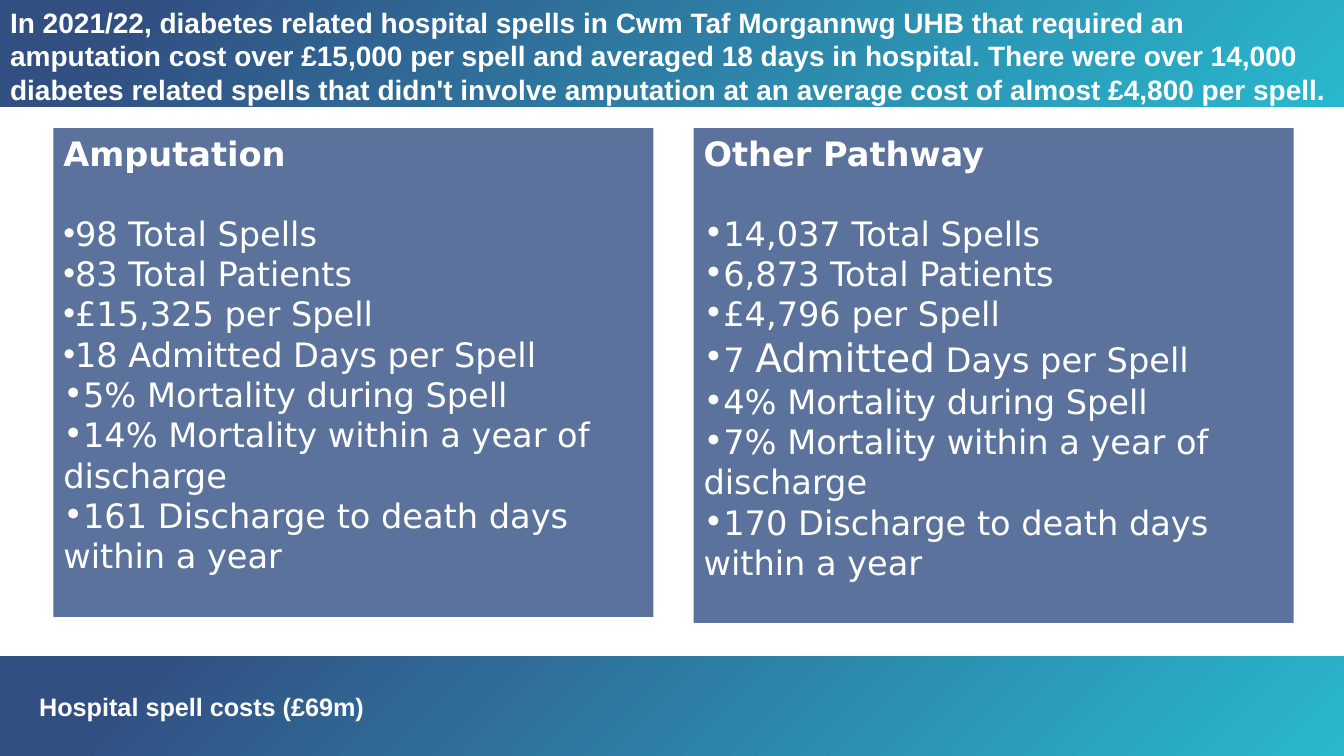
from dataclasses import dataclass

from lxml.etree import SubElement
from pptx import Presentation
from pptx.dml.color import RGBColor
from pptx.enum.shapes import MSO_SHAPE as Preset
from pptx.enum.text import MSO_ANCHOR as Anchor, MSO_AUTO_SIZE as AutoSize, PP_ALIGN as Align
from pptx.oxml.ns import qn
from pptx.shapes.autoshape import Shape
from pptx.slide import Slide
from pptx.text.text import Font, TextFrame
from pptx.util import Inches, Pt

WHITE = RGBColor(0xFF, 0xFF, 0xFF)
NAVY = RGBColor(0x32, 0x4F, 0x82)
CYAN = RGBColor(0x28, 0xB8, 0xCE)
SLATE = RGBColor(0x5B, 0x73, 0x9C)

BAND_FONT = "Arial"
PANEL_FONT = "DejaVu Sans"
SLIDE_WIDTH = 13.33
PANEL_TOP = 1.27
PANEL_WIDTH = 5.95

HEADLINE = (
    "In 2021/22, diabetes related hospital spells in Cwm Taf Morgannwg UHB that required an "
    "amputation cost over £15,000 per spell and averaged 18 days in hospital. There were over "
    "14,000 diabetes related spells that didn't involve amputation at an average cost of almost "
    "£4,800 per spell."
)


@dataclass(frozen=True)
class Band:
    top: float
    height: float


@dataclass(frozen=True)
class Panel:
    left: float
    height: float
    heading: str
    facts: tuple[str, ...]
    bullet_fonts: tuple[str, ...]
    enlarged: str = ""


BANDS = (Band(6.51, 0.99), Band(0, 1.06))

PANELS = (
    Panel(
        0.53,
        4.85,
        "Amputation",
        (
            "98 Total Spells",
            "83 Total Patients",
            "£15,325 per Spell",
            "18 Admitted Days per Spell",
            "5% Mortality during Spell",
            "14% Mortality within a year of discharge",
            "161 Discharge to death days within a year",
        ),
        (BAND_FONT,) * 4 + (PANEL_FONT,) * 3,
    ),
    Panel(
        6.88,
        4.91,
        "Other Pathway",
        (
            "14,037 Total Spells",
            "6,873 Total Patients",
            "£4,796 per Spell",
            "7 Admitted Days per Spell",
            "4% Mortality during Spell",
            "7% Mortality within a year of discharge",
            "170 Discharge to death days within a year",
        ),
        (PANEL_FONT,) * 7,
        enlarged="Admitted",
    ),
)


def style_font(font: Font, name: str, size: int, bold: bool) -> None:
    font.name = name
    font.size = Pt(size)
    font.bold = bold
    font.color.rgb = WHITE


def add_rectangle(page: Slide, left: float, top: float, width: float, height: float) -> Shape:
    box = page.shapes.add_shape(
        Preset.RECTANGLE, Inches(left), Inches(top), Inches(width), Inches(height)
    )
    box.shadow.inherit = False
    box.line.fill.background()
    return box


def add_band(page: Slide, band: Band) -> None:
    box = add_rectangle(page, 0, band.top, SLIDE_WIDTH, band.height)
    box.fill.gradient()
    box.fill.gradient_angle = 315
    for stop, position, color in zip(box.fill.gradient_stops, (0.1, 1), (NAVY, CYAN)):
        stop.position = position
        stop.color.rgb = color


def add_fact(frame: TextFrame, fact: str, bullet_font: str, enlarged: str) -> None:
    para = frame.add_paragraph()
    para.alignment = Align.LEFT
    properties = para._p.get_or_add_pPr()
    properties.set("marL", "0")
    properties.set("indent", "0")
    SubElement(properties, qn("a:buFont"), typeface=bullet_font)
    SubElement(properties, qn("a:buChar"), char="•")
    parts = fact.partition(enlarged) if enlarged else (fact,)
    for part in filter(None, parts):
        span = para.add_run()
        span.text = part
        style_font(span.font, PANEL_FONT, 28 if part == enlarged else 24, False)


def add_panel(page: Slide, panel: Panel) -> None:
    box = add_rectangle(page, panel.left, PANEL_TOP, PANEL_WIDTH, panel.height)
    box.fill.solid()
    box.fill.fore_color.rgb = SLATE
    frame = box.text_frame
    frame.word_wrap = True
    frame.vertical_anchor = Anchor.TOP
    frame.text = panel.heading
    heading = frame.paragraphs[0]
    heading.alignment = Align.LEFT
    heading.space_after = Pt(28)
    style_font(heading.runs[0].font, PANEL_FONT, 24, True)
    for fact, bullet_font in zip(panel.facts, panel.bullet_fonts):
        add_fact(frame, fact, bullet_font, panel.enlarged)


def fill_band_text(box: Shape, text: str, size: int) -> None:
    frame = box.text_frame
    frame.word_wrap = True
    frame.auto_size = AutoSize.SHAPE_TO_FIT_TEXT
    frame.vertical_anchor = Anchor.TOP
    frame.text = text
    para = frame.paragraphs[0]
    para.alignment = Align.LEFT
    style_font(para.runs[0].font, BAND_FONT, size, True)


def place_title(page: Slide) -> None:
    title = page.shapes.title
    title.left, title.top = Inches(0), Inches(0)
    title.width, title.height = Inches(SLIDE_WIDTH), Inches(1.11)
    fill_band_text(title, HEADLINE, 20)
    title.element.getparent().append(title.element)


def main() -> None:
    deck = Presentation()
    deck.slide_width = Inches(SLIDE_WIDTH)
    deck.slide_height = Inches(7.5)
    page = deck.slides.add_slide(deck.slide_layouts.get_by_name("Title Only"))
    for band in BANDS:
        add_band(page, band)
    place_title(page)
    for panel in PANELS:
        add_panel(page, panel)
    footer = page.shapes.add_textbox(Inches(0.29), Inches(6.81), Inches(4.55), Inches(0.4))
    fill_band_text(footer, "Hospital spell costs (£69m)", 18)
    deck.save("out.pptx")


if __name__ == "__main__":
    main()
